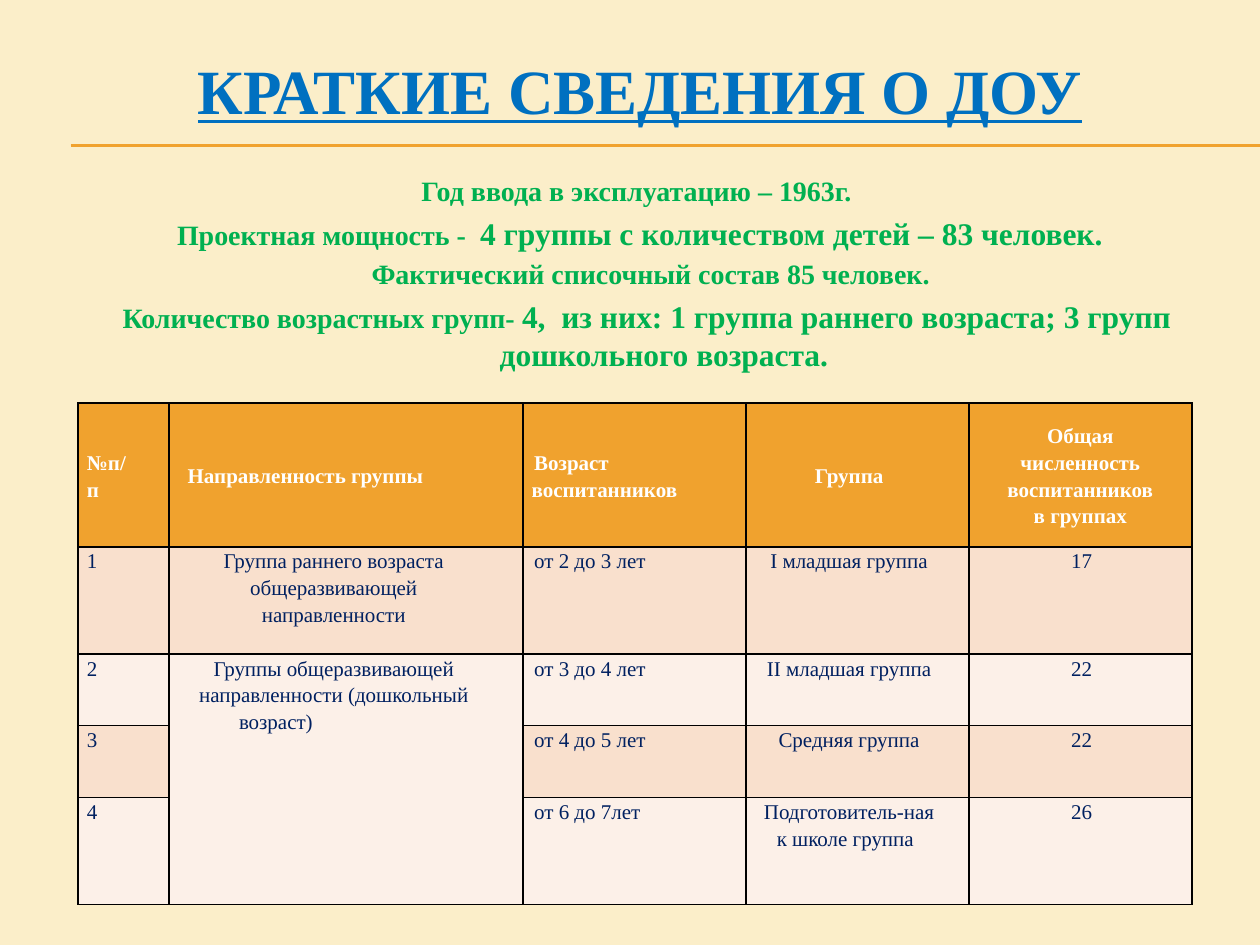
from lxml import etree
from pptx import Presentation
from pptx.dml.color import RGBColor
from pptx.enum.shapes import MSO_CONNECTOR
from pptx.enum.text import MSO_ANCHOR, MSO_AUTO_SIZE, PP_ALIGN
from pptx.oxml.ns import qn
from pptx.util import Inches, Pt

CENTER, LEFT, JUST = PP_ALIGN.CENTER, PP_ALIGN.LEFT, PP_ALIGN.JUSTIFY
TOP, MIDDLE = MSO_ANCHOR.TOP, MSO_ANCHOR.MIDDLE
STRAIGHT = MSO_CONNECTOR.STRAIGHT
NO_FIT = MSO_AUTO_SIZE.NONE

FONT = "Times New Roman"
CREAM, ORANGE, BLUE, GREEN = "FBEEC9", "F0A22E", "0070C0", "00B050"
WHITE, NAVY, BLACK = "FFFFFF", "002060", "000000"
BANDS = ["F9E0CD", "FCF0E8"]

# Each fact: first-line indent, then runs of (text, size)
FACTS = [
    (-0.38, [("Год ввода в эксплуатацию – 1963г. ", 16)]),
    (-0.38, [("Проектная мощность -  ", 16),
             ("4 группы с количеством детей – 83 человек.", 18)]),
    (-0.21, [("Фактический списочный состав 85 человек.", 16)]),
    (-0.27, [("Количество возрастных групп- ", 16),
             ("4,  из них: 1 группа раннего возраста; 3 групп "
              "дошкольного возраста.", 18)]),
]

COLS = [0.72, 2.81, 1.77, 1.77, 1.77]
ROWS = [1.14, 0.85, 0.57, 0.57, 0.85]
# Per column: alignment, first-line indent, right indent
STYLES = [(JUST, 0, 0.2), (CENTER, 0, 0.19), (JUST, 0.02, 0),
          (CENTER, 0.06, 0.19), (CENTER, 0.02, 0)]
# Cell text: one line of the list is one paragraph
HEAD = [["№п/п"], ["Направленность группы"], ["Возраст воспитанников"],
        ["Группа"], ["Общая", "численность", "воспитанников", "в группах"]]
GROUPS = [
    [["1"], ["Группа раннего возраста общеразвивающей направленности"],
     ["от 2 до 3 лет"], ["I младшая группа"], ["17"]],
    [["2"], ["Группы общеразвивающей направленности (дошкольный", "возраст)"],
     ["от 3 до 4 лет"], ["II младшая группа"], ["22"]],
    [["3"], [], ["от 4 до 5 лет"], ["Средняя группа"], ["22"]],
    [["4"], [], ["от 6 до 7лет"], ["Подготовитель-ная к школе группа"], ["26"]],
]


def rgb(code):
    return RGBColor.from_string(code)


def add_run(para, text, size, color, bold=True):
    run = para.add_run()
    run.text = text
    font = run.font
    font.name, font.size, font.bold = FONT, Pt(size), bold
    font.color.rgb = rgb(color)
    return run


def indent(para, first, left=0, right=0):
    props = para._p.get_or_add_pPr()
    for key, val in (("marL", left), ("marR", right), ("indent", first)):
        props.set(key, str(Inches(val)))


def get_para(frame, i):
    return frame.add_paragraph() if i else frame.paragraphs[0]


def add_rule(slide, y):
    rule = slide.shapes.add_connector(
        STRAIGHT, Inches(0.56), Inches(y), Inches(10), Inches(y))
    rule.line.color.rgb = rgb(ORANGE)
    rule.line.width = Pt(0.75)
    etree.SubElement(rule._element.spPr, qn("a:effectLst"))


def set_title(slide, text):
    title = slide.shapes.title
    title.left, title.top = Inches(0.33), Inches(0)
    title.width, title.height = Inches(9.5), Inches(1.42)
    frame = title.text_frame
    frame.auto_size, frame.vertical_anchor = NO_FIT, MIDDLE
    para = frame.paragraphs[0]
    para.alignment = CENTER
    add_run(para, text, 36, BLUE).font.underline = True


def add_facts(slide):
    box = slide.shapes.add_textbox(
        Inches(0.33), Inches(1.33), Inches(9.5), Inches(6.17))
    frame = box.text_frame
    frame.word_wrap, frame.auto_size = True, NO_FIT
    for i, (first, runs) in enumerate(FACTS):
        para = get_para(frame, i)
        para.alignment = CENTER
        para.space_before = Pt(0.2 * runs[-1][1])
        indent(para, first, left=0.38)
        for text, size in runs:
            add_run(para, text, size, GREEN)


def add_border(cell):
    props = cell._tc.get_or_add_tcPr()
    for i, side in enumerate(("lnL", "lnR", "lnT", "lnB")):
        line = etree.Element(qn("a:" + side), w=str(Pt(1)))
        fill = etree.SubElement(line, qn("a:solidFill"))
        etree.SubElement(fill, qn("a:srgbClr"), val=BLACK)
        props.insert(i, line)


def fill_cell(cell, lines, row, col):
    head = row == 0
    cell.fill.solid()
    cell.fill.fore_color.rgb = rgb(ORANGE if head else BANDS[(row - 1) % 2])
    cell.margin_left = cell.margin_right = Inches(0.07)
    cell.margin_top = cell.margin_bottom = 0
    cell.vertical_anchor = MIDDLE if head else TOP
    add_border(cell)
    align, first, right = STYLES[col]
    if head and col == 1:
        align, first = LEFT, 0.08
    for i, text in enumerate(lines):
        para = get_para(cell.text_frame, i)
        para.alignment, para.line_spacing = align, 1.15
        # The tail line of the merged cell sits left of centre
        tail = 0.92 if col == 1 and i else 0
        indent(para, 0 if head and col == 4 else first, right=right + tail)
        add_run(para, text, 12, WHITE if head else NAVY, head)


def add_groups(slide):
    table = slide.shapes.add_table(
        len(ROWS), len(COLS), Inches(0.62), Inches(3.2),
        Inches(sum(COLS)), Inches(sum(ROWS))).table
    for col, width in zip(table.columns, COLS):
        col.width = Inches(width)
    for row, height in zip(table.rows, ROWS):
        row.height = Inches(height)
    for r, row in enumerate([HEAD] + GROUPS):
        for c, lines in enumerate(row):
            fill_cell(table.cell(r, c), lines, r, c)
    table.cell(2, 1).merge(table.cell(4, 1))


def main():
    deck = Presentation()
    deck.slide_width, deck.slide_height = Inches(10), Inches(7.5)
    slide = deck.slides.add_slide(deck.slide_layouts[5])
    back = slide.background.fill
    back.solid()
    back.fore_color.rgb = rgb(CREAM)
    # Double rule under the title
    for y in (1.15, 1.16):
        add_rule(slide, y)
    set_title(slide, "КРАТКИЕ СВЕДЕНИЯ О ДОУ")
    add_facts(slide)
    add_groups(slide)
    deck.save("out.pptx")


if __name__ == "__main__":
    main()
